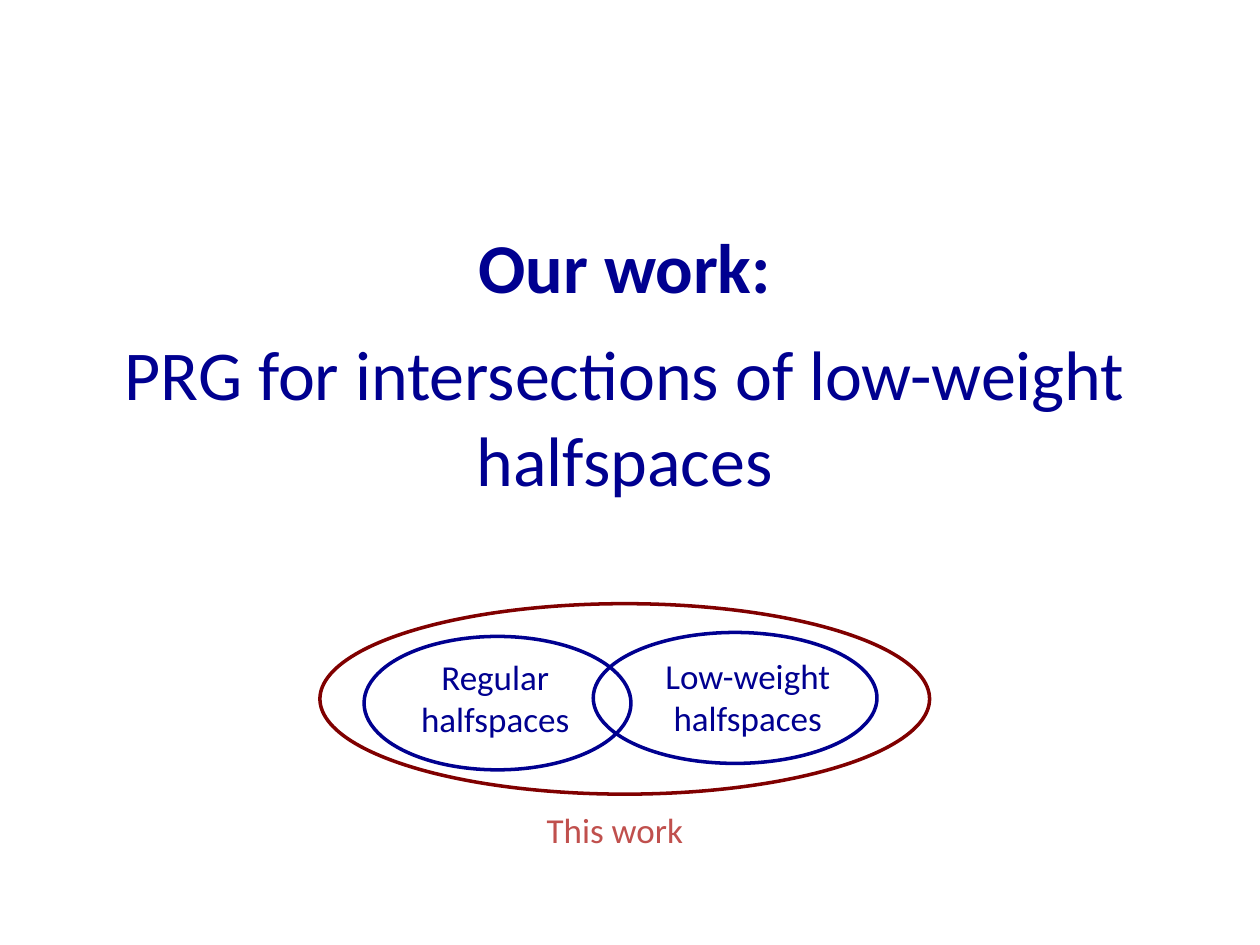
from dataclasses import dataclass

from pptx import Presentation
from pptx.dml.color import RGBColor
from pptx.enum.shapes import MSO_SHAPE
from pptx.enum.text import MSO_ANCHOR, PP_ALIGN
from pptx.slide import Slide
from pptx.text.text import TextFrame
from pptx.util import Cm, Pt

OVAL = MSO_SHAPE.OVAL
TOP, MIDDLE = MSO_ANCHOR.TOP, MSO_ANCHOR.MIDDLE
LEFT, CENTER = PP_ALIGN.LEFT, PP_ALIGN.CENTER

NAVY = RGBColor(0x00, 0x00, 0x90)
MAROON = RGBColor(0x80, 0x00, 0x00)
BRICK = RGBColor(0xC0, 0x50, 0x4D)
FONT = "Calibri"


@dataclass(frozen=True)
class Area:
    left: float
    top: float
    width: float
    height: float

    def lengths(self) -> tuple[Cm, Cm, Cm, Cm]:
        return Cm(self.left), Cm(self.top), Cm(self.width), Cm(self.height)


@dataclass(frozen=True)
class HalfspaceClass:
    area: Area
    color: RGBColor


@dataclass(frozen=True)
class Label:
    text: str
    area: Area
    color: RGBColor = NAVY
    align: PP_ALIGN = CENTER


HEADLINE_AREA = Area(0.91, 5.41, 23.37, 3.73)

CLASSES = (
    HalfspaceClass(Area(11.96, 12.75, 5.72, 2.64), NAVY),
    HalfspaceClass(Area(7.34, 12.83, 5.38, 2.69), NAVY),
    HalfspaceClass(Area(6.45, 12.17, 12.29, 3.84), MAROON),
)

LABELS = (
    Label("Regular halfspaces", Area(7.47, 13.08, 5.03, 1.96)),
    Label("Low-weight halfspaces", Area(12.88, 13.06, 4.39, 1.96)),
    Label("This work", Area(10.77, 16.18, 3.78, 1.12), BRICK, LEFT),
)


def add_text_area(slide: Slide, area: Area, anchor: MSO_ANCHOR = TOP) -> TextFrame:
    frame = slide.shapes.add_textbox(*area.lengths()).text_frame
    frame.word_wrap = True
    frame.vertical_anchor = anchor
    return frame


def write(frame: TextFrame, text: str, *, size: float = 20,
          color: RGBColor = NAVY, bold: bool = False,
          align: PP_ALIGN = CENTER, line_spacing: float | None = None,
          space_after: float = 0) -> None:
    first = frame.paragraphs[0]
    paragraph = frame.add_paragraph() if first.runs else first
    paragraph.alignment = align
    paragraph.space_after = Pt(space_after)
    if line_spacing:
        paragraph.line_spacing = Pt(line_spacing)
    run = paragraph.add_run()
    run.text = text
    run.font.name = FONT
    run.font.size = Pt(size)
    run.font.bold = bold
    run.font.color.rgb = color


def draw_class(slide: Slide, halfspaces: HalfspaceClass) -> None:
    ellipse = slide.shapes.add_shape(OVAL, *halfspaces.area.lengths())
    ellipse.shadow.inherit = False
    ellipse.fill.background()
    ellipse.line.color.rgb = halfspaces.color
    ellipse.line.width = Pt(2)


def draw_label(slide: Slide, label: Label) -> None:
    frame = add_text_area(slide, label.area)
    write(frame, label.text, color=label.color, align=label.align)


def main() -> None:
    presentation = Presentation()
    presentation.slide_width = Cm(25.4)
    presentation.slide_height = Cm(19.05)
    slide = presentation.slides.add_slide(presentation.slide_layouts[6])

    headline = add_text_area(slide, HEADLINE_AREA, MIDDLE)
    write(headline, "Our work:", size=40, bold=True,
          line_spacing=49.2, space_after=12)
    write(headline, "PRG for intersections of low-weight halfspaces",
          size=40, line_spacing=49.2)

    for halfspaces in CLASSES:
        draw_class(slide, halfspaces)
    for label in LABELS:
        draw_label(slide, label)

    presentation.save("out.pptx")


if __name__ == "__main__":
    main()
